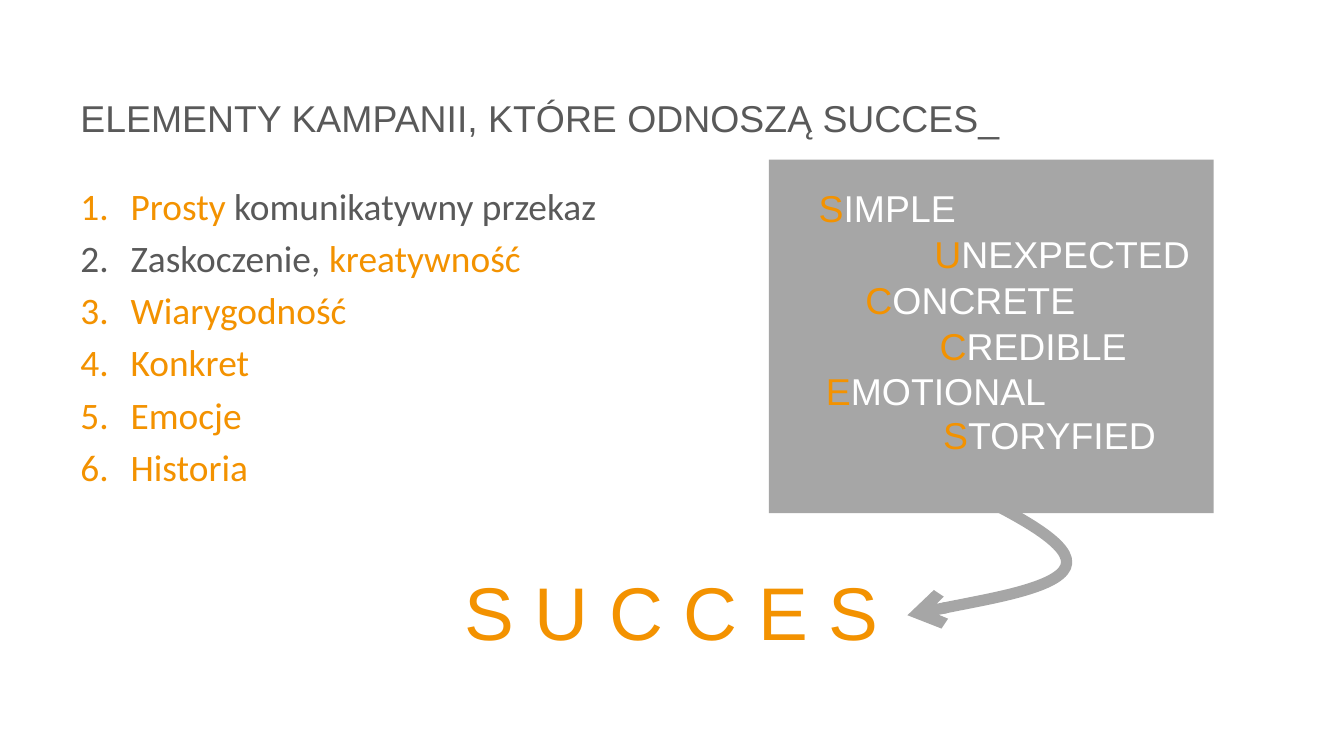
from lxml.etree import SubElement
from pptx import Presentation
from pptx.dml.color import RGBColor
from pptx.enum.shapes import MSO_SHAPE
from pptx.enum.text import MSO_ANCHOR, PP_ALIGN
from pptx.oxml.ns import qn
from pptx.util import Cm, Pt

COLOURS = {"orange": "F39200", "dark": "595959", "grey": "A6A6A6", "white": "FFFFFF"}
ARIAL = {"name": "Arial", "size": Pt(20)}
ARIAL_LARGE = {"name": "Arial", "size": Pt(40)}
CALIBRI = {"name": "Calibri", "size": Pt(20)}

ELEMENTS = [
    [("Prosty", "orange"), (" komunikatywny przekaz", "dark")],
    [("Zaskoczenie, ", "dark"), ("kreatywność", "orange")],
    [("Wiarygodność", "orange")],
    [("Konkret", "orange")],
    [("Emocje", "orange")],
    [("Historia", "orange")],
]
KEYWORDS = [
    ("SIMPLE", 15.21, 3.38, 3.12),
    ("UNEXPECTED", 17.37, 4.24, 5.41),
    ("CONCRETE", 16.08, 5.11, 4.52),
    ("CREDIBLE", 17.48, 5.99, 4.09),
    ("EMOTIONAL", 15.34, 6.83, 4.7),
    ("STORYFIED", 17.55, 7.67, 4.57),
]
ARROW_POINTS = [
    (18.16, 9.22), (19.25, 9.75), (20.32, 10.31), (20.14, 10.72),
    (19.96, 11.13), (17.15, 11.63), (17.15, 11.63),
]


def colour(name):
    return RGBColor.from_string(COLOURS[name])


def apply_format(target, values):
    for attribute, value in values.items():
        setattr(target, attribute, value)


def add_runs(paragraph, runs, font_format):
    for text, colour_name in runs:
        run = paragraph.add_run()
        run.text = text
        apply_format(run.font, font_format)
        run.font.color.rgb = colour(colour_name)


def add_text(shapes, box, runs, font_format, frame_format, alignment=PP_ALIGN.LEFT):
    frame = shapes.add_textbox(*map(Cm, box)).text_frame
    apply_format(frame, frame_format)
    paragraph = frame.paragraphs[0]
    paragraph.alignment = alignment
    add_runs(paragraph, runs, font_format)


def add_numbered_list(shapes, box, items):
    frame = shapes.add_textbox(*map(Cm, box)).text_frame
    frame.word_wrap = True
    for index, runs in enumerate(items):
        paragraph = frame.add_paragraph() if index else frame.paragraphs[0]
        if index:
            paragraph.space_before = Pt(4)
        properties = paragraph._p.get_or_add_pPr()
        properties.set("marL", str(Cm(0.95)))
        properties.set("indent", str(-Cm(0.95)))
        SubElement(properties, qn("a:buFont"), typeface="+mj-lt")
        SubElement(properties, qn("a:buAutoNum"), type="arabicPeriod")
        add_runs(paragraph, runs, CALIBRI)


def add_panel(shapes, box):
    panel = shapes.add_shape(MSO_SHAPE.RECTANGLE, *map(Cm, box))
    panel.shadow.inherit = False
    panel.fill.solid()
    panel.fill.fore_color.rgb = colour("grey")
    panel.line.fill.background()


def add_curved_arrow(shapes, points):
    start, *others = [(Cm(x), Cm(y)) for x, y in points]
    builder = shapes.build_freeform(*start)
    builder.add_line_segments(others, close=False)
    arrow = builder.convert_to_shape()
    arrow.shadow.inherit = False
    arrow.fill.background()
    arrow.line.color.rgb = colour("grey")
    arrow.line.width = Pt(6)
    SubElement(arrow.line._get_or_add_ln(), qn("a:tailEnd"), type="arrow")
    outline = next(arrow._element.iter(qn("a:path")))
    segments = outline.findall(qn("a:lnTo"))
    for first in range(0, len(segments), 3):
        curve = SubElement(outline, qn("a:cubicBezTo"))
        for segment in segments[first:first + 3]:
            curve.append(segment[0])
            outline.remove(segment)


def main():
    presentation = Presentation()
    presentation.slide_width = Cm(25.4)
    presentation.slide_height = Cm(14.29)
    slide = presentation.slides.add_slide(presentation.slide_layouts[6])
    shapes = slide.shapes

    add_numbered_list(shapes, (1.27, 3.33, 22.86, 9.42), ELEMENTS)
    add_text(shapes, (1.27, 1.02, 22.86, 2.39),
             [("ELEMENTY KAMPANII, KTÓRE ODNOSZĄ SUCCES_", "dark")], ARIAL,
             {"word_wrap": True, "vertical_anchor": MSO_ANCHOR.MIDDLE})

    keyword_group = shapes.add_group_shape().shapes
    add_panel(keyword_group, (14.53, 3.02, 8.41, 6.68))
    for word, left, top, width in KEYWORDS:
        add_text(keyword_group, (left, top, width, 1.11),
                 [(word[0], "orange"), (word[1:], "white")], ARIAL,
                 {"word_wrap": False}, PP_ALIGN.CENTER)

    result_group = shapes.add_group_shape().shapes
    add_text(result_group, (8.48, 10.57, 8.43, 1.96), [("S U C C E S", "orange")],
             ARIAL_LARGE, {"word_wrap": False}, PP_ALIGN.CENTER)
    add_curved_arrow(result_group, ARROW_POINTS)

    presentation.save("out.pptx")


if __name__ == "__main__":
    main()
